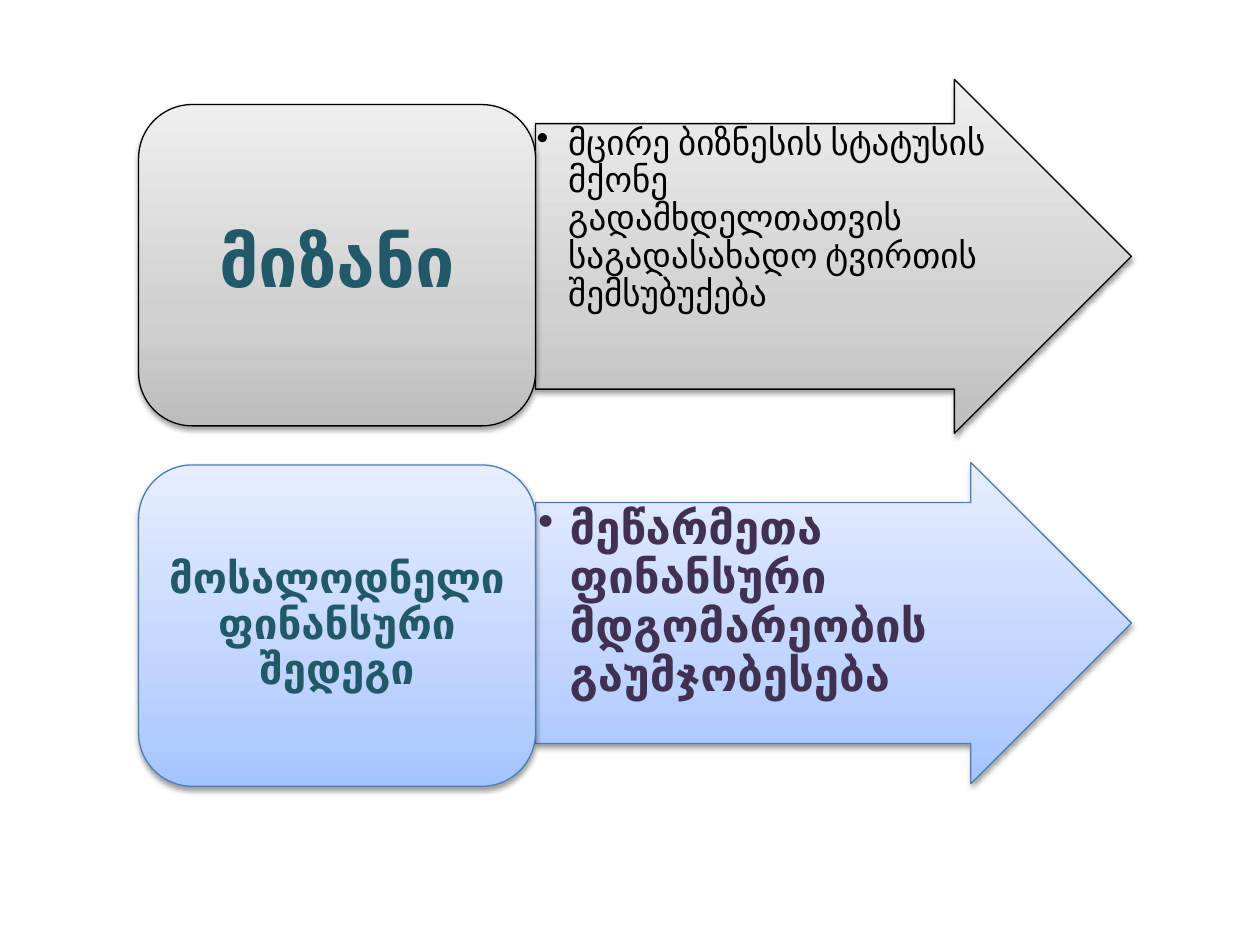
from lxml import etree
from pptx import Presentation, util as u
from pptx.dml.color import RGBColor
from pptx.enum import shapes, text
from pptx.oxml.ns import qn

THEME = {
    "font": "Calibri",
    "label": "215968",
    "gray": {"stops": [(0, "BDBDBD"), (35, "D1D1D1"), (100, "EEEEEE")], "line": "000000"},
    "blue": {"stops": [(0, "A4C4FF"), (35, "BFD4FF"), (100, "E6EEFF")], "line": "4B7EBC"},
}

ROWS = [
    {
        "look": "gray",
        "label": "მიზანი", "label_size": 40, "label_insets": (0.17, 0.08),
        "detail": "მცირე ბიზნესის სტატუსის მქონე გადამხდელთათვის საგადასახადო ტვირთის შემსუბუქება",
        "detail_size": 20, "detail_color": "000000", "detail_bold": False, "detail_inset": 0.01,
        "card_top": 0.83, "arrow_top": 0.63, "arrow_height": 2.81,
    },
    {
        "look": "blue",
        "label": "მოსალოდნელი ფინანსური შედეგი", "label_size": 24, "label_insets": (0.1, 0.05),
        "detail": "მეწარმეთა ფინანსური მდგომარეობის გაუმჯობესება",
        "detail_size": 26, "detail_color": "403152", "detail_bold": True, "detail_inset": 0.02,
        "card_top": 3.69, "arrow_top": 3.67, "arrow_height": 2.55,
    },
]

CARD_LEFT, CARD_WIDTH, CARD_HEIGHT, CARD_MARGIN = 1.1, 3.15, 2.55, 0.125
ARROW_LEFT, ARROW_WIDTH = CARD_LEFT + CARD_WIDTH, 4.73
SHAFT, HEAD = 0.75, 0.5
BULLET_INDENT = 0.25


def add_block(slide, kind, box, look):
    block = slide.shapes.add_shape(kind, *map(u.Inches, box))
    block.fill.gradient()
    block.fill.gradient_angle = 90
    properties = block._element.spPr
    stops = properties.find(qn("a:gradFill")).find(qn("a:gsLst"))
    stops.clear()
    for position, color in look["stops"]:
        stop = etree.SubElement(stops, qn("a:gs"), pos=str(position * 1000))
        etree.SubElement(stop, qn("a:srgbClr"), val=color)
    block.line.color.rgb = RGBColor.from_string(look["line"])
    block.line.width = u.Pt(0.75)
    block.shadow.inherit = False
    shadow = etree.SubElement(
        properties.find(qn("a:effectLst")), qn("a:outerShdw"),
        blurRad=str(u.Pt(3.1)), dist=str(u.Pt(1.6)), dir="5400000", rotWithShape="0")
    tint = etree.SubElement(shadow, qn("a:srgbClr"), val="000000")
    etree.SubElement(tint, qn("a:alpha"), val="38000")
    return block


def add_words(slide, box, words, size, color, bold, insets, anchor, align):
    frame = slide.shapes.add_textbox(*map(u.Inches, box)).text_frame
    frame.word_wrap = True
    frame.vertical_anchor = anchor
    frame.margin_left = frame.margin_right = u.Inches(insets[0])
    frame.margin_top = frame.margin_bottom = u.Inches(insets[1])
    paragraph = frame.paragraphs[0]
    paragraph.alignment = align
    paragraph.line_spacing = 0.9
    run = paragraph.add_run()
    run.text = words
    run.font.name = THEME["font"]
    run.font.size = u.Pt(size)
    run.font.bold = bold
    run.font.color.rgb = RGBColor.from_string(color)
    return paragraph


def add_bullet(paragraph):
    properties = paragraph._p.get_or_add_pPr()
    properties.set("marL", str(u.Inches(BULLET_INDENT)))
    properties.set("indent", str(-u.Inches(BULLET_INDENT)))
    etree.SubElement(properties, qn("a:buChar"), char="•")


def add_row(slide, row):
    look = THEME[row["look"]]
    top, height = row["arrow_top"], row["arrow_height"]
    arrow = add_block(slide, shapes.MSO_SHAPE.RIGHT_ARROW,
                      (ARROW_LEFT, top, ARROW_WIDTH, height), look)
    arrow.adjustments[0], arrow.adjustments[1] = SHAFT, HEAD
    detail_box = (ARROW_LEFT, top + height * (1 - SHAFT) / 2,
                  ARROW_WIDTH - height * (HEAD - (1 - SHAFT) / 2), height * SHAFT)
    detail = add_words(slide, detail_box, row["detail"], row["detail_size"],
                       row["detail_color"], row["detail_bold"], (row["detail_inset"],) * 2,
                       text.MSO_ANCHOR.TOP, text.PP_ALIGN.LEFT)
    add_bullet(detail)

    add_block(slide, shapes.MSO_SHAPE.ROUNDED_RECTANGLE,
              (CARD_LEFT, row["card_top"], CARD_WIDTH, CARD_HEIGHT), look)
    label_box = (CARD_LEFT + CARD_MARGIN, row["card_top"] + CARD_MARGIN,
                 CARD_WIDTH - 2 * CARD_MARGIN, CARD_HEIGHT - 2 * CARD_MARGIN)
    add_words(slide, label_box, row["label"], row["label_size"], THEME["label"], True,
              row["label_insets"], text.MSO_ANCHOR.MIDDLE, text.PP_ALIGN.CENTER)


def main():
    deck = Presentation()
    deck.slide_width, deck.slide_height = u.Inches(10), u.Inches(7.5)
    slide = deck.slides.add_slide(deck.slide_layouts[6])
    for row in ROWS:
        add_row(slide, row)
    deck.save("out.pptx")


if __name__ == "__main__":
    main()
